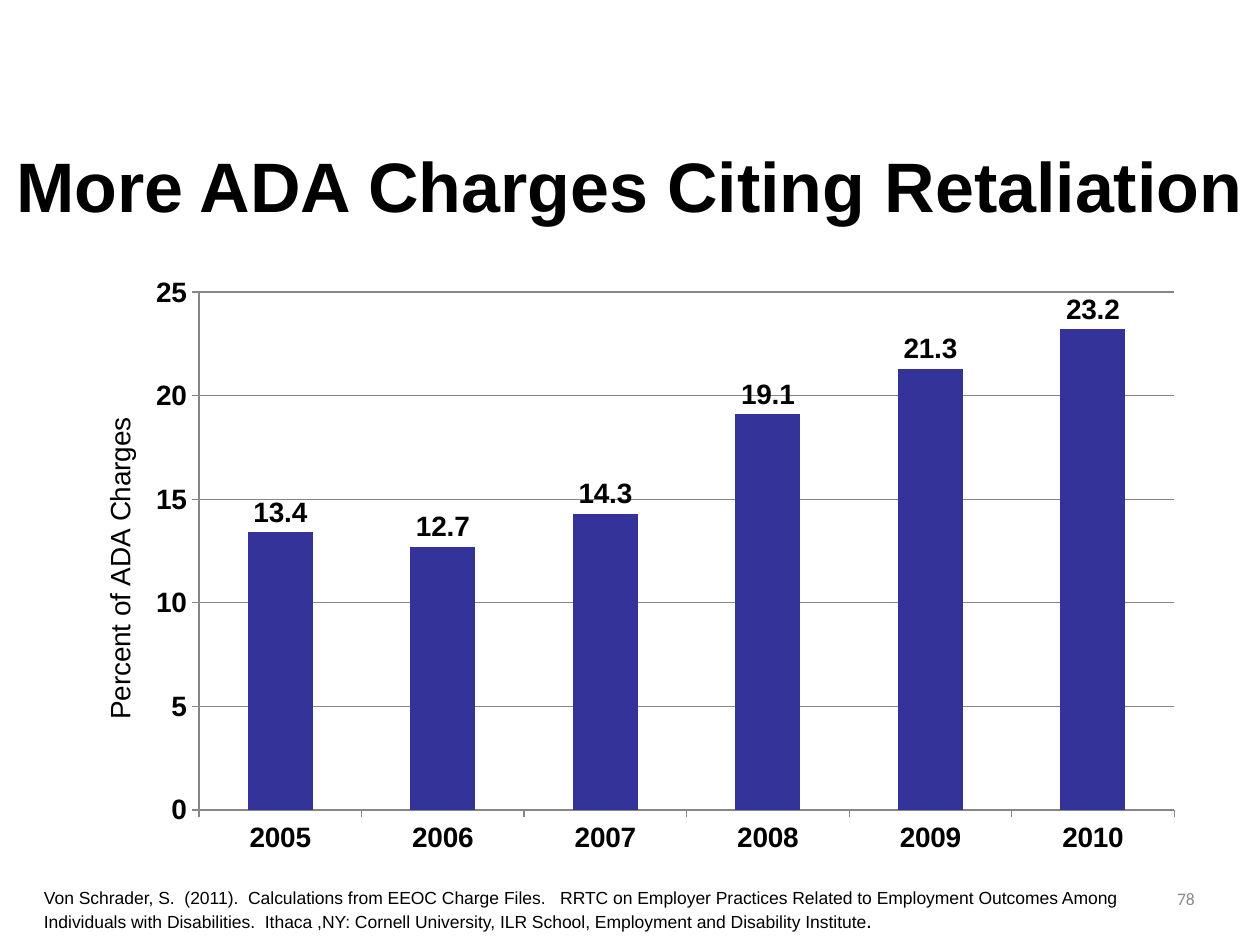
from lxml import etree
from pptx import Presentation
from pptx.chart.data import CategoryChartData
from pptx.dml.color import RGBColor
from pptx.enum.chart import XL_CHART_TYPE, XL_LABEL_POSITION, XL_TICK_MARK
from pptx.enum.text import MSO_ANCHOR, PP_ALIGN
from pptx.oxml.ns import qn
from pptx.util import Inches, Pt

COLUMN = XL_CHART_TYPE.COLUMN_CLUSTERED
OUTER = XL_LABEL_POSITION.OUTSIDE_END
TICK = XL_TICK_MARK.OUTSIDE
LEFT, MID, RIGHT = PP_ALIGN.LEFT, PP_ALIGN.CENTER, PP_ALIGN.RIGHT
TOP, CENTER = MSO_ANCHOR.TOP, MSO_ANCHOR.MIDDLE

COLORS = {"ink": "000000", "bar": "333399", "line": "868686", "page": "898989"}
SHARES = {"2005": 13.4, "2006": 12.7, "2007": 14.3,
          "2008": 19.1, "2009": 21.3, "2010": 23.2}
SOURCE = ("Von Schrader, S.  (2011).  Calculations from EEOC Charge Files.   "
          "RRTC on Employer Practices Related to Employment Outcomes Among "
          "Individuals with Disabilities.  Ithaca ,NY: Cornell University, "
          "ILR School, Employment and Disability Institute")


def color(key):
    return RGBColor.from_string(COLORS[key])


def style(font, size, name="Arial", ink="ink", bold=False):
    font.size = Pt(size)
    font.name = name
    font.bold = bold
    font.color.rgb = color(ink)


def add_text(slide, box, *runs, align=LEFT, anchor=TOP, **form):
    frame = slide.shapes.add_textbox(*map(Inches, box)).text_frame
    frame.word_wrap = True
    frame.vertical_anchor = anchor
    para = frame.paragraphs[0]
    para.alignment = align
    for text, size in runs:
        run = para.add_run()
        run.text = text
        style(run.font, size, **form)


def place(node, index, **spots):
    for old in node.findall(qn("c:layout")):
        node.remove(old)
    layout = etree.Element(qn("c:layout"))
    manual = etree.SubElement(layout, qn("c:manualLayout"))
    for tag, val in spots.items():
        etree.SubElement(manual, qn(f"c:{tag}")).set("val", str(val))
    node.insert(index, layout)


def style_axis(axis):
    axis.major_tick_mark = TICK
    axis.minor_tick_mark = XL_TICK_MARK.NONE
    axis.format.line.color.rgb = color("line")
    style(axis.tick_labels.font, 16, bold=True)


def name_axis(axis, text):
    title = axis.axis_title
    frame = title.text_frame
    frame.text = text
    style(frame.paragraphs[0].runs[0].font, 16)
    body = frame._txBody.bodyPr
    body.set("rot", "-5400000")
    body.set("vert", "horz")
    place(title._element, 1, xMode="edge", yMode="edge", x=0.03, y=0.25)


def add_bars(slide, box):
    data = CategoryChartData(number_format="#,##0.0")
    data.categories = list(SHARES)
    data.add_series("Series 1", list(SHARES.values()))
    chart = slide.shapes.add_chart(COLUMN, *map(Inches, box), data).chart
    chart.has_legend = False
    chart.has_title = False
    style(chart.font, 16, bold=True)

    plot = chart.plots[0]
    plot.gap_width = 150
    plot.vary_by_categories = False
    fill = plot.series[0].format.fill
    fill.solid()
    fill.fore_color.rgb = color("bar")
    plot.has_data_labels = True
    labels = plot.data_labels
    labels.show_value = True
    labels.number_format = "#,##0.0"
    labels.number_format_is_linked = False
    labels.position = OUTER
    style(labels.font, 16, bold=True)

    style_axis(chart.category_axis)
    axis = chart.value_axis
    style_axis(axis)
    axis.minimum_scale, axis.maximum_scale, axis.major_unit = 0, 25, 5
    axis.tick_labels.number_format = "0"
    axis.tick_labels.number_format_is_linked = False
    axis.has_major_gridlines = True
    axis.major_gridlines.format.line.color.rgb = color("line")
    name_axis(axis, "Percent of ADA Charges")
    area = chart._chartSpace.chart.plotArea
    place(area, 0, layoutTarget="inner", xMode="edge", yMode="edge",
          x=0.12, y=0.05, w=0.86, h=0.86)


def main():
    deck = Presentation()
    deck.slide_width, deck.slide_height = Inches(10), Inches(7.5)
    slide = deck.slides.add_slide(deck.slide_layouts[6])
    add_text(slide, (-0.17, 1.18, 10.33, 0.57),
             ("More ADA Charges Citing Retaliation", 40),
             align=MID, anchor=CENTER, bold=True)
    add_bars(slide, (0.5, 2.08, 9, 4.78))
    add_text(slide, (0.25, 6.99, 9.08, 0.47), (SOURCE, 10), (".", 12))
    add_text(slide, (7.5, 7, 2.08, 0.5), ("78", 10),
             align=RIGHT, name="Calibri", ink="page")
    deck.save("out.pptx")


if __name__ == "__main__":
    main()
